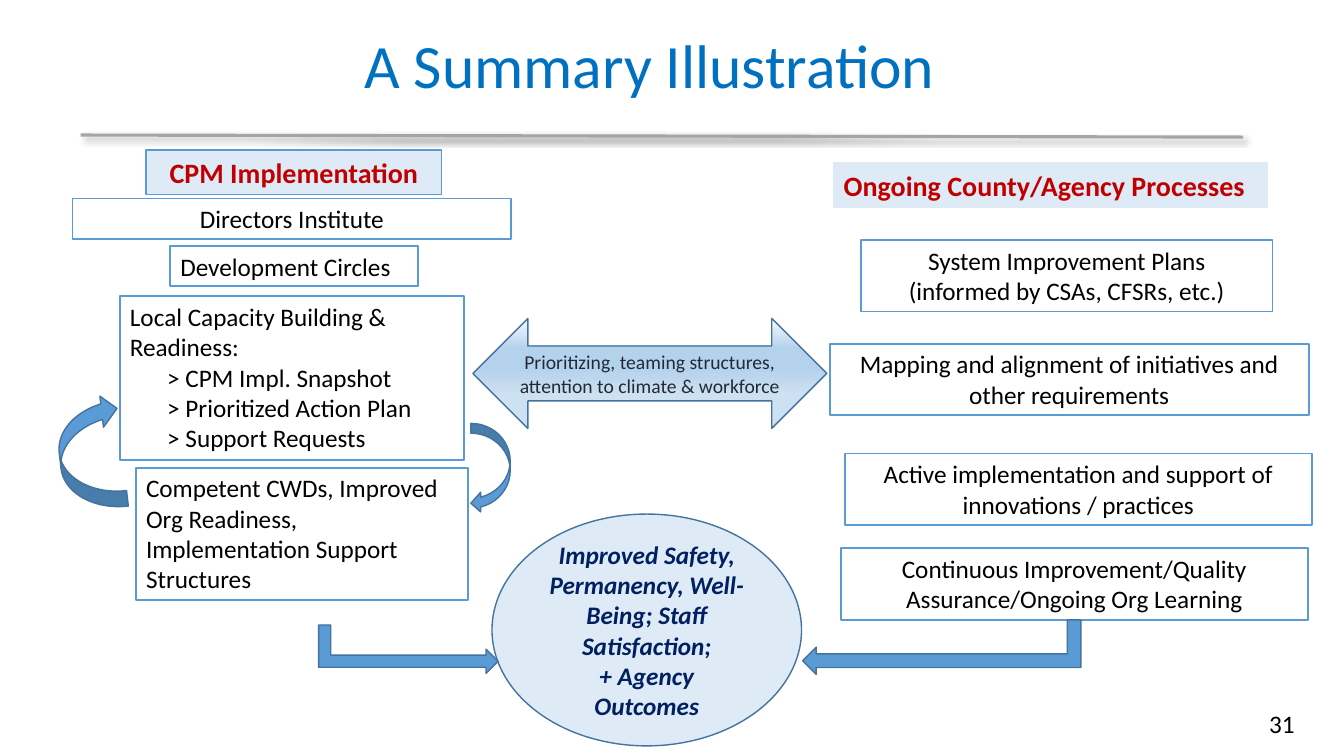
import pptx
import pptx.dml.color
import pptx.enum.shapes
import pptx.enum.text
import pptx.oxml
import pptx.oxml.ns
import pptx.util
from lxml import etree

RGBColor = pptx.dml.color.RGBColor
Shapes = pptx.enum.shapes.MSO_SHAPE
Align = pptx.enum.text.PP_ALIGN
Anchor = pptx.enum.text.MSO_ANCHOR
qn = pptx.oxml.ns.qn

PX = 9144
FONT = "Calibri"
BLACK = RGBColor(0x00, 0x00, 0x00)
TITLE_BLUE = RGBColor(0x00, 0x70, 0xC0)
BLUE = RGBColor(0x5B, 0x9B, 0xD5)
DARK_BLUE = RGBColor(0x43, 0x73, 0x9E)
PALE_BLUE = RGBColor(0xDE, 0xEB, 0xF7)
NAVY = RGBColor(0x00, 0x20, 0x60)
SLATE = RGBColor(0x22, 0x2A, 0x35)
RED = RGBColor(0xC0, 0x00, 0x00)
GRAY = RGBColor(0xA5, 0xA5, 0xA5)
GRADIENT_STOPS = [
    (0, RGBColor(0xF7, 0xFA, 0xFD)),
    (27, RGBColor(0xB5, 0xD2, 0xEC)),
    (46, RGBColor(0xB5, 0xD2, 0xEC)),
    (70, RGBColor(0xCE, 0xE1, 0xF2)),
]

CENTERED_BOXES = [
    ((72, 197, 435, 40), ["Directors Institute"]),
    ((854, 238, 408, 71), ["System Improvement Plans", "(informed by CSAs, CFSRs, etc.)"]),
    ((823, 341, 475, 71), ["Mapping and alignment of initiatives and other requirements"]),
    ((838, 450, 463, 71), ["Active implementation and support of innovations / practices"]),
    ((834, 544, 463, 71), ["Continuous Improvement/Quality Assurance/Ongoing Org Learning"]),
]
LEFT_BOXES = [
    ((169, 244, 246, 40), ["Development Circles"]),
    ((119, 294, 341, 162), [
        "Local Capacity Building & Readiness:",
        "> CPM Impl. Snapshot",
        "> Prioritized Action Plan",
        "> Support Requests",
    ]),
    ((135, 464, 329, 131), [
        "Competent CWDs, Improved Org Readiness, Implementation Support Structures",
    ]),
]
ARROWS = [
    (Shapes.CURVED_LEFT_ARROW, (467, 420, 39, 89), 0, False),
    (Shapes.CURVED_LEFT_ARROW, (59, 393, 62, 113), 173.4, False),
    (Shapes.BENT_UP_ARROW, (907, 504, 54, 276), 270, True),
    (Shapes.BENT_UP_ARROW, (381, 555, 48, 178), 90, False),
]


def scaled(lengths):
    return [length * PX for length in lengths]


def write_text(shape, lines, size, color, align=Align.LEFT, anchor=Anchor.TOP,
               bold=False, italic=False, wrap=True):
    frame = shape.text_frame
    frame.word_wrap = wrap
    frame.vertical_anchor = anchor
    for index, line in enumerate(lines):
        paragraph = frame.add_paragraph() if index else frame.paragraphs[0]
        if line.startswith(">"):
            paragraph._p.get_or_add_pPr().set("marL", str(37 * PX))
        paragraph.alignment = align
        run = paragraph.add_run()
        run.text = line
        run.font.name = FONT
        run.font.size = pptx.util.Pt(size)
        run.font.color.rgb = color
        run.font.bold = bold
        run.font.italic = italic


def add_shape(slide, kind, bounds, fill, line, width):
    shape = slide.shapes.add_shape(kind, *scaled(bounds))
    shape.shadow.inherit = False
    if fill is None:
        shape.fill.background()
    else:
        shape.fill.solid()
        shape.fill.fore_color.rgb = fill
    shape.line.color.rgb = line
    shape.line.width = pptx.util.Pt(width)
    return shape


def add_box(slide, bounds, lines, align):
    box = add_shape(slide, Shapes.RECTANGLE, bounds, None, BLUE, 1.25)
    write_text(box, lines, 18, BLACK, align)


def add_heading(slide, bounds, text, line, align):
    heading = add_shape(slide, Shapes.RECTANGLE, bounds, PALE_BLUE, line, 1.25)
    write_text(heading, [text], 20, RED, align, bold=True)


def add_arrow(slide, kind, bounds, rotation, flipped):
    arrow = add_shape(slide, kind, bounds, BLUE, DARK_BLUE, 1)
    arrow.rotation = rotation
    if flipped:
        arrow._element.spPr.find(qn("a:xfrm")).set("flipH", "1")


def apply_gradient(shape):
    shape.fill.gradient()
    shape.fill.gradient_angle = 270
    stops = shape._element.spPr.find(".//" + qn("a:gsLst"))
    for stop in list(stops):
        stops.remove(stop)
    for position, color in GRADIENT_STOPS:
        stop = etree.SubElement(stops, qn("a:gs"), pos=str(position * 1000))
        etree.SubElement(stop, qn("a:srgbClr"), val=str(color))


def add_rule(slide):
    rule = slide.shapes.add_connector(
        pptx.enum.shapes.MSO_CONNECTOR.STRAIGHT, *scaled((80, 134, 1233, 136)))
    rule.line.color.rgb = GRAY
    rule.line.width = pptx.util.Pt(2.25)
    effects = etree.SubElement(rule._element.spPr, qn("a:effectLst"))
    shadow = etree.SubElement(
        effects, qn("a:outerShdw"), blurRad=str(pptx.util.Pt(4)),
        dist=str(pptx.util.Pt(3)), dir="2700000", algn="tl", rotWithShape="0")
    color = etree.SubElement(shadow, qn("a:srgbClr"), val=str(BLACK))
    etree.SubElement(color, qn("a:alpha"), val="40000")


def add_title(slide, text):
    title = slide.shapes.title
    title.left, title.top, title.width, title.height = scaled((283, 22, 723, 84))
    write_text(title, [text], 44, TITLE_BLUE, Align.CENTER)
    title.text_frame.auto_size = pptx.enum.text.MSO_AUTO_SIZE.NONE


def add_page_number(slide, text):
    number = slide.shapes.add_textbox(*scaled((1249, 698, 50, 40)))
    write_text(number, [text], 18, BLACK, wrap=False)


def main():
    presentation = pptx.Presentation()
    presentation.slide_width, presentation.slide_height = scaled((1333, 750))
    slide = presentation.slides.add_slide(presentation.slide_layouts[5])

    add_page_number(slide, "31")
    add_rule(slide)
    add_title(slide, "A Summary Illustration")
    add_heading(slide, (145, 149, 293, 44), "CPM Implementation", BLUE, Align.CENTER)
    add_heading(slide, (827, 162, 430, 44), "Ongoing County/Agency Processes",
                PALE_BLUE, Align.LEFT)
    for bounds, lines in CENTERED_BOXES:
        add_box(slide, bounds, lines, Align.CENTER)
    for bounds, lines in LEFT_BOXES:
        add_box(slide, bounds, lines, Align.LEFT)

    exchange = add_shape(slide, Shapes.LEFT_RIGHT_ARROW, (469, 316, 351, 109),
                         PALE_BLUE, DARK_BLUE, 1)
    apply_gradient(exchange)
    write_text(exchange, ["Prioritizing, teaming structures, attention to climate & workforce"],
               14, SLATE, Align.CENTER, Anchor.MIDDLE)

    outcomes = add_shape(slide, Shapes.OVAL, (488, 510, 307, 230), PALE_BLUE, DARK_BLUE, 1)
    write_text(outcomes,
               ["Improved Safety, Permanency, Well-Being; Staff Satisfaction;",
                "+ Agency Outcomes"],
               18, NAVY, Align.CENTER, Anchor.MIDDLE, bold=True, italic=True)

    for arrow in ARROWS:
        add_arrow(slide, *arrow)

    presentation.save("out.pptx")


if __name__ == "__main__":
    main()
